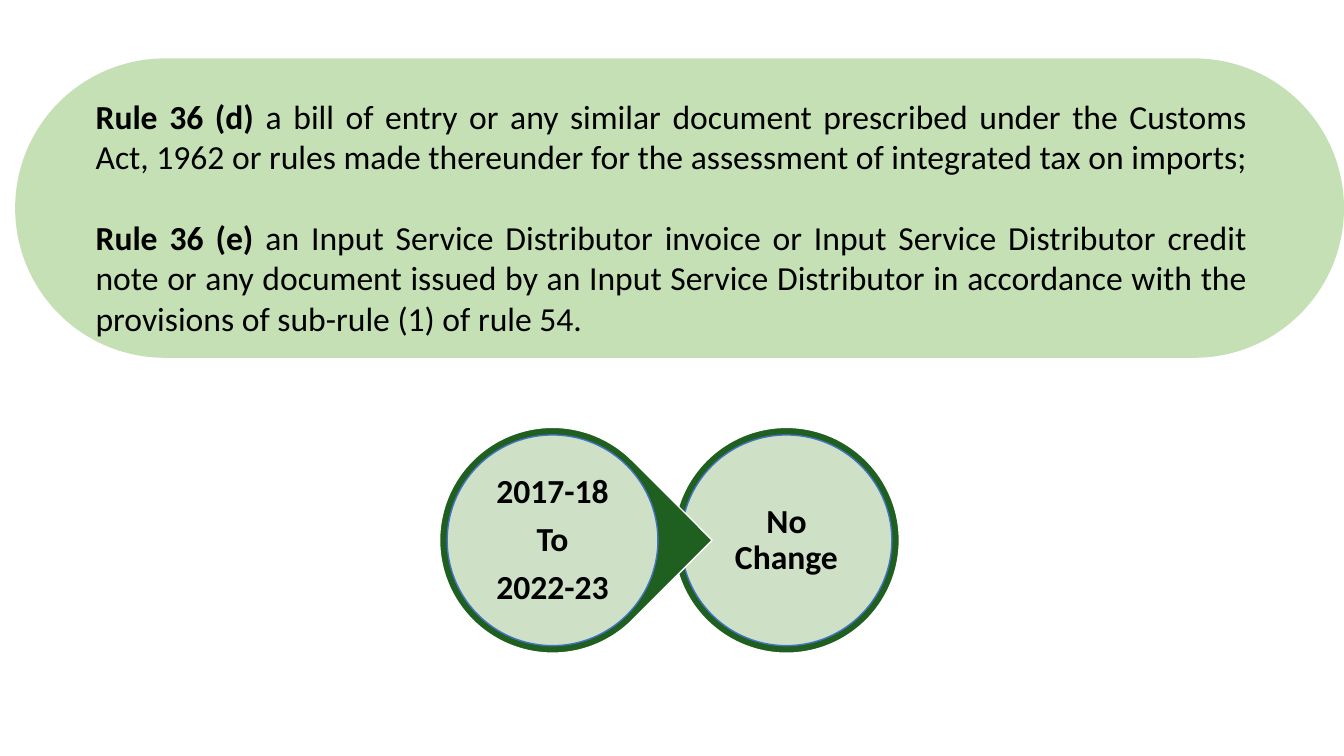
from lxml import etree
from pptx import Presentation
from pptx.dml.color import RGBColor
from pptx.enum.shapes import MSO_SHAPE as SHAPE
from pptx.enum.text import MSO_ANCHOR as ANCHOR, PP_ALIGN as ALIGN
from pptx.oxml.ns import qn
from pptx.util import Inches, Pt

COLORS = {
    "panel": "C5E0B4",
    "ring": "1F5F1F",
    "ring_line": "FFFFFF",
    "disc": "E2F0D9",
    "disc_line": "4472C4",
    "text": "000000",
}
FONT = "Calibri"
RING_TOP, RING_SIZE = 4.24, 2.24
DISC_SIZE, LABEL_SIZE = 2.09, 1.49

RULES = [
    [("Rule 36 (d)", True),
     (" a bill of entry or any similar document prescribed under the Customs "
      "Act, 1962 or rules made thereunder for the assessment of integrated "
      "tax on imports;", False)],
    [("Rule 36 (e)", True),
     (" an Input Service Distributor invoice or Input Service Distributor "
      "credit note or any document issued by an Input Service Distributor in "
      "accordance with the provisions of sub-rule (1) of rule 54.", False)],
]


def add_text(slide, box, paragraphs, *, align, anchor=ANCHOR.TOP, margin=None,
             line_spacing=None, space_after=0, size=24):
    """Add a text box; each paragraph is a list of (text, bold) runs."""
    frame = slide.shapes.add_textbox(*map(Inches, box)).text_frame
    frame.word_wrap = True
    frame.vertical_anchor = anchor
    if margin is not None:
        frame.margin_left = frame.margin_right = Inches(margin)
        frame.margin_top = frame.margin_bottom = Inches(margin)
    for index, runs in enumerate(paragraphs):
        paragraph = frame.add_paragraph() if index else frame.paragraphs[0]
        paragraph.alignment = align
        paragraph.line_spacing = line_spacing
        if index < len(paragraphs) - 1:
            paragraph.space_after = Pt(space_after)
        for text, bold in runs:
            run = paragraph.add_run()
            run.text = text
            run.font.name = FONT
            run.font.size = Pt(size)
            run.font.bold = bold
            run.font.color.rgb = RGBColor.from_string(COLORS["text"])


def add_filled_shape(slide, kind, box, fill, line=None, opacity=100):
    shape = slide.shapes.add_shape(kind, *map(Inches, box))
    shape.shadow.inherit = False
    shape.fill.solid()
    shape.fill.fore_color.rgb = RGBColor.from_string(COLORS[fill])
    if opacity < 100:
        color = shape.fill._xPr.find(qn("a:solidFill"))[0]
        etree.SubElement(color, qn("a:alpha"), val=str(opacity * 1000))
    if line:
        shape.line.color.rgb = RGBColor.from_string(COLORS[line])
        shape.line.width = Pt(1)
    else:
        shape.line.fill.background()
    return shape


def centered_box(left, size):
    """Return a square of the given size centred in the ring at left."""
    inset = (RING_SIZE - size) / 2
    return left + inset, RING_TOP + inset, size, size


def add_stage(slide, left, lines, kind=SHAPE.OVAL, rotation=0):
    ring = add_filled_shape(slide, kind, centered_box(left, RING_SIZE),
                            "ring", "ring_line")
    ring.rotation = rotation
    add_filled_shape(slide, SHAPE.OVAL, centered_box(left, DISC_SIZE),
                     "disc", "disc_line", opacity=90)
    add_text(slide, centered_box(left, LABEL_SIZE),
             [[(line, True)] for line in lines], align=ALIGN.CENTER,
             anchor=ANCHOR.MIDDLE, margin=0.03, line_spacing=0.9,
             space_after=8.4)


def main():
    presentation = Presentation()
    presentation.slide_width = Inches(13.33)
    presentation.slide_height = Inches(7.5)
    slide = presentation.slides.add_slide(presentation.slide_layouts[6])

    panel = add_filled_shape(slide, SHAPE.ROUNDED_RECTANGLE,
                             (0.15, 0.58, 13.18, 2.97), "panel")
    panel.adjustments[0] = 0.5
    add_text(slide, (0.85, 0.9, 11.62, 2.52), RULES,
             align=ALIGN.JUSTIFY, space_after=29)

    add_stage(slide, 6.68, ["No Change"])
    add_stage(slide, 4.36, ["2017-18", "To", "2022-23"],
              kind=SHAPE.TEAR, rotation=45)

    presentation.save("out.pptx")


if __name__ == "__main__":
    main()
